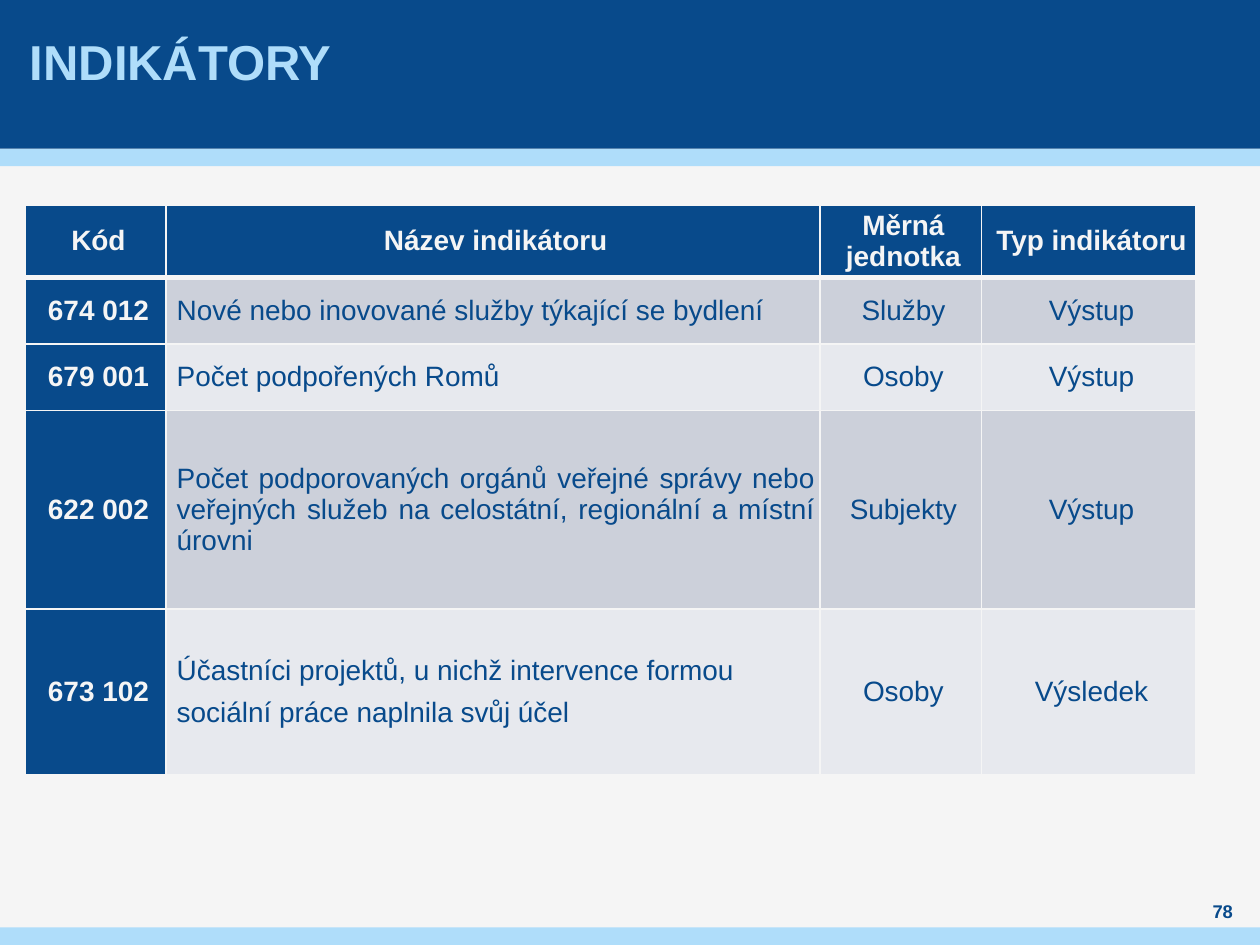
from pptx import Presentation
from pptx.dml.color import RGBColor
from pptx.enum.shapes import MSO_SHAPE
from pptx.enum.text import MSO_ANCHOR, PP_ALIGN
from pptx.oxml.ns import qn
from pptx.util import Pt
from lxml.etree import SubElement

COLORS = {
    "navy": "084A8B",
    "sky": "AFDDFA",
    "paper": "F5F5F5",
    "band_dark": "CCD0DA",
    "band_light": "E7E9EE",
}
COLUMNS = [80.5, 373.5, 92.5, 122.5]
HEIGHTS = [41.5, 38, 38, 113.5, 95]
ROWS = [
    ["Kód", "Název indikátoru", "Měrná jednotka", "Typ indikátoru"],
    ["674 012", "Nové nebo inovované služby týkající se bydlení", "Služby", "Výstup"],
    ["679 001", "Počet podpořených Romů", "Osoby", "Výstup"],
    ["622 002", "Počet podporovaných orgánů veřejné správy nebo veřejných "
     "služeb na celostátní, regionální a místní úrovni", "Subjekty", "Výstup"],
    ["673 102", "Účastníci projektů, u nichž intervence formou\n"
     "sociální práce naplnila svůj účel", "Osoby", "Výsledek"],
]


def rgb(name):
    return RGBColor.from_string(COLORS[name])


def write_text(tf, text, size=16, color="navy", bold=False,
               align=PP_ALIGN.LEFT, space=0, indent=0):
    tf.word_wrap = True
    for i, line in enumerate(text.split("\n")):
        p = tf.paragraphs[0] if i == 0 else tf.add_paragraph()
        p.alignment = align
        p.space_before = p.space_after = Pt(space)
        pPr = p._p.get_or_add_pPr()
        pPr.set("marL", str(Pt(indent)))
        pPr.set("indent", "0")
        r = p.add_run()
        r.text = line
        r.font.name = "Arial"
        r.font.size = Pt(size)
        r.font.bold = bold
        r.font.color.rgb = rgb(color)


def set_margins(box, side):
    box.margin_left = box.margin_right = Pt(side)
    box.margin_top = box.margin_bottom = 0
    box.vertical_anchor = MSO_ANCHOR.MIDDLE


def add_bar(s, top, height, color):
    sp = s.shapes.add_shape(MSO_SHAPE.RECTANGLE, 0, Pt(top), Pt(720), Pt(height))
    sp.shadow.inherit = False
    sp.fill.solid()
    sp.fill.fore_color.rgb = rgb(color)
    sp.line.fill.background()


def add_text(s, text, left, top, width, height, side=0, **fmt):
    sp = s.shapes.add_textbox(Pt(left), Pt(top), Pt(width), Pt(height))
    set_margins(sp.text_frame, side)
    write_text(sp.text_frame, text, **fmt)


def set_borders(cell, **widths):
    tcPr = cell._tc.get_or_add_tcPr()
    for side in "LRTB":
        ln = SubElement(tcPr, qn(f"a:ln{side}"), w=str(Pt(widths.get(side, 1))))
        fill = SubElement(ln, qn("a:solidFill"))
        SubElement(fill, qn("a:srgbClr"), val=COLORS["paper"])


def fill_cell(cell, text, row, col):
    heading = row == 0 or col == 0
    band = "band_dark" if row % 2 else "band_light"
    set_margins(cell, 3)
    set_borders(cell, B=3 if row == 0 else 1, T=3 if row == 1 else 1)
    cell.fill.solid()
    cell.fill.fore_color.rgb = rgb("navy" if heading else band)
    write_text(cell.text_frame, text, bold=heading,
               color="paper" if heading else "navy",
               align=PP_ALIGN.JUSTIFY if col == 1 and row else PP_ALIGN.CENTER,
               space=3, indent=3)


def add_indicator_table(s, left, top):
    table = s.shapes.add_table(len(ROWS), len(COLUMNS), Pt(left), Pt(top),
                               Pt(sum(COLUMNS)), Pt(sum(HEIGHTS))).table
    table.horz_banding = False
    for column, width in zip(table.columns, COLUMNS):
        column.width = Pt(width)
    for i, (row, height) in enumerate(zip(table.rows, HEIGHTS)):
        row.height = Pt(height)
        for j, cell in enumerate(row.cells):
            fill_cell(cell, ROWS[i][j], i, j)


def main():
    prs = Presentation()
    prs.slide_width, prs.slide_height = Pt(720), Pt(540)
    s = prs.slides.add_slide(prs.slide_layouts[6])
    s.background.fill.solid()
    s.background.fill.fore_color.rgb = rgb("paper")
    add_bar(s, 85, 10, "sky")
    add_bar(s, 0, 85, "navy")
    add_bar(s, 530, 10, "sky")
    add_text(s, "INDIKÁTORY", 14, -8, 663, 85, side=3, size=28, color="sky", bold=True)
    add_text(s, "78", 680.5, 513.5, 36.5, 14, size=10.5, bold=True, align=PP_ALIGN.CENTER)
    add_indicator_table(s, 14.5, 117)
    prs.save("out.pptx")


if __name__ == "__main__":
    main()
